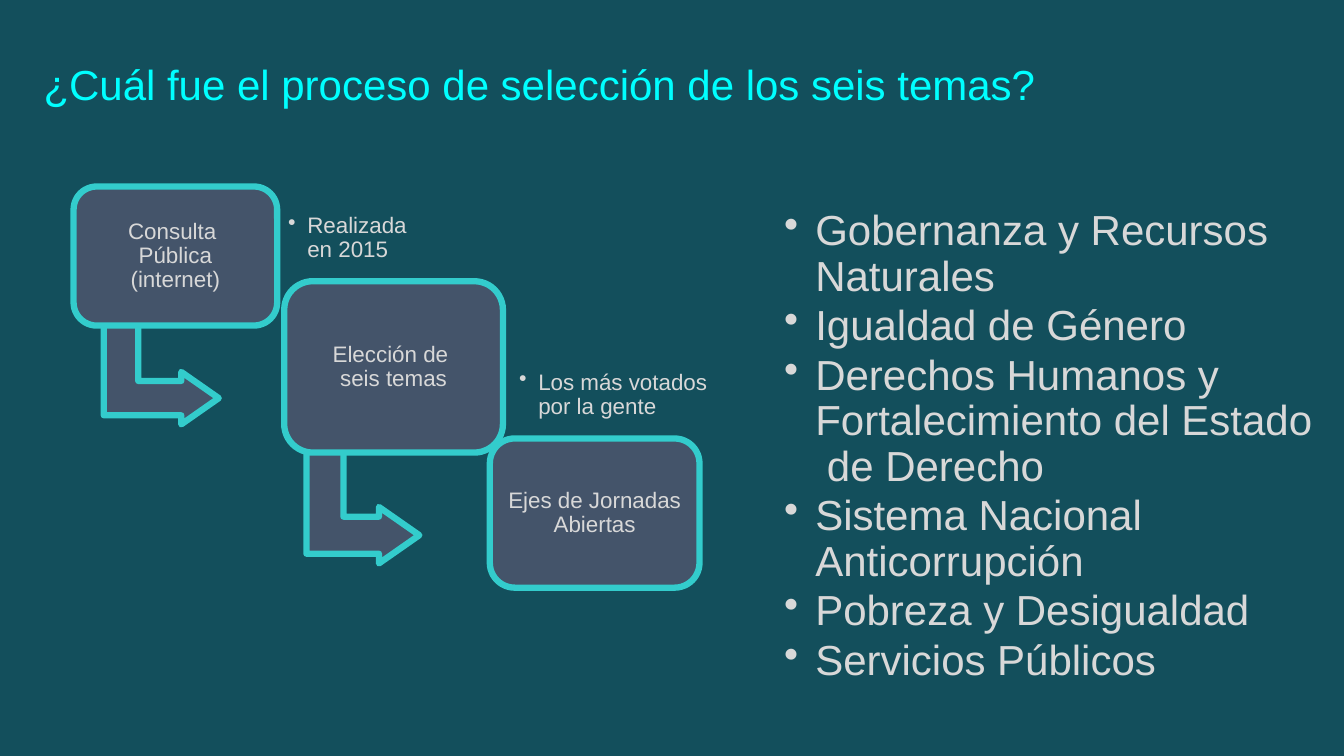
"""Builds the slide on how the six topics were chosen."""
from lxml.etree import SubElement
from pptx import Presentation
from pptx.dml.color import RGBColor
from pptx.enum.shapes import MSO_SHAPE
from pptx.enum.text import MSO_ANCHOR, PP_ALIGN
from pptx.oxml.ns import qn
from pptx.util import Inches, Pt

TEAL = RGBColor(0x13, 0x4F, 0x5C)
CYAN = RGBColor(0x00, 0xFF, 0xFF)
SLATE = RGBColor(0x44, 0x54, 0x6A)
AQUA = RGBColor(0x33, 0xCC, 0xCC)
PALE = RGBColor(0xD8, 0xD8, 0xD8)

WIDE, HIGH = 13.33, 7.5
COLS, ROWS = 40, 22.5

ARROWS = [(3.24, 9.36, 3.12, 3.42), (9.12, 13.41, 3.36, 3.36)]
STEPS = [
    ((2.19, 5.55, 6.06, 4.14), "Consulta \nPública\n(internet)"),
    ((8.46, 8.37, 6.51, 5.1), "Elección de \nseis temas"),
    ((14.58, 13.05, 6.24, 4.44), "Ejes de Jornadas Abiertas"),
]
NOTES = [
    ((8.28, 5.34, 4.32, 3.51), "Realizada en 2015", 0.1),
    ((15.24, 9.51, 11.19, 4.5), "Los más votados \npor la gente", 0.07),
]
TOPICS = [
    "Gobernanza y Recursos Naturales",
    "Igualdad de Género",
    "Derechos Humanos y Fortalecimiento del Estado\n de Derecho",
    "Sistema Nacional Anticorrupción",
    "Pobreza y Desigualdad",
    "Servicios Públicos",
]


def apply(item, values):
    for name, value in values.items():
        setattr(item, name, value)


class Board:
    def __init__(self, deck):
        self.slide = deck.slides.add_slide(deck.slide_layouts[6])
        fill = self.slide.background.fill
        fill.solid()
        fill.fore_color.rgb = TEAL
        self.font = {"name": "Arial", "size": Pt(16)}

    def place(self, area):
        col, row, wide, high = area
        return (Inches(col * WIDE / COLS), Inches(row * HIGH / ROWS),
                Inches(wide * WIDE / COLS), Inches(high * HIGH / ROWS))

    def frame(self, shape, inset, anchor=MSO_ANCHOR.MIDDLE, top=None):
        side = Inches(inset)
        edge = side if top is None else Inches(top)
        apply(shape.text_frame, {
            "word_wrap": True, "vertical_anchor": anchor,
            "margin_left": side, "margin_right": side,
            "margin_top": edge, "margin_bottom": edge})
        return shape.text_frame

    def label(self, para, text, color=PALE, **style):
        para.text = text
        for run in para.runs:
            apply(run.font, {**self.font, **style})
            run.font.color.rgb = color

    def shape(self, kind, area):
        shape = self.slide.shapes.add_shape(kind, *self.place(area))
        shape.shadow.inherit = False
        shape.fill.solid()
        shape.fill.fore_color.rgb = SLATE
        shape.line.color.rgb = AQUA
        shape.line.width = Pt(4.5)
        return shape

    def arrow(self, area):
        shape = self.shape(MSO_SHAPE.BENT_UP_ARROW, area)
        shape.rotation = 90
        for spot, value in enumerate((0.328, 0.25, 0.358)):
            shape.adjustments[spot] = value

    def step(self, area, text):
        shape = self.shape(MSO_SHAPE.ROUNDED_RECTANGLE, area)
        para = self.frame(shape, 0.07).paragraphs[0]
        apply(para, {"alignment": PP_ALIGN.CENTER, "line_spacing": 0.9})
        self.label(para, text)

    def title(self, area, text):
        box = self.slide.shapes.add_textbox(*self.place(area))
        frame = self.frame(box, 0.1, MSO_ANCHOR.TOP, 0.05)
        self.label(frame.paragraphs[0], text, CYAN, size=Pt(30))

    def bullets(self, area, items, inset=0.1, size=16, left=0.19, hang=0.19):
        box = self.slide.shapes.add_textbox(*self.place(area))
        frame = self.frame(box, inset)
        for spot, text in enumerate(items):
            para = frame.add_paragraph() if spot else frame.paragraphs[0]
            apply(para, {"line_spacing": 0.9, "space_before": Pt(3 if spot else 0)})
            self.label(para, text, size=Pt(size))
            props = para._p.get_or_add_pPr()
            props.set("marL", str(Inches(left)))
            props.set("indent", str(-Inches(hang)))
            tint = SubElement(props, qn("a:buClr"))
            SubElement(tint, qn("a:srgbClr"), val=str(PALE))
            SubElement(props, qn("a:buChar"), char="•")


def main():
    deck = Presentation()
    apply(deck, {"slide_width": Inches(WIDE), "slide_height": Inches(HIGH)})
    board = Board(deck)
    board.title((1, 1.59, 37.47, 1.5),
                "¿Cuál fue el proceso de selección de los seis temas?")
    for area in ARROWS:
        board.arrow(area)
    for area, text in STEPS:
        board.step(area, text)
    for area, text, inset in NOTES:
        board.bullets(area, [text], inset)
    board.bullets((23.04, 6, 16.95, 14.61), TOPICS, size=30, left=0.31, hang=0.38)
    deck.save("out.pptx")


if __name__ == "__main__":
    main()
